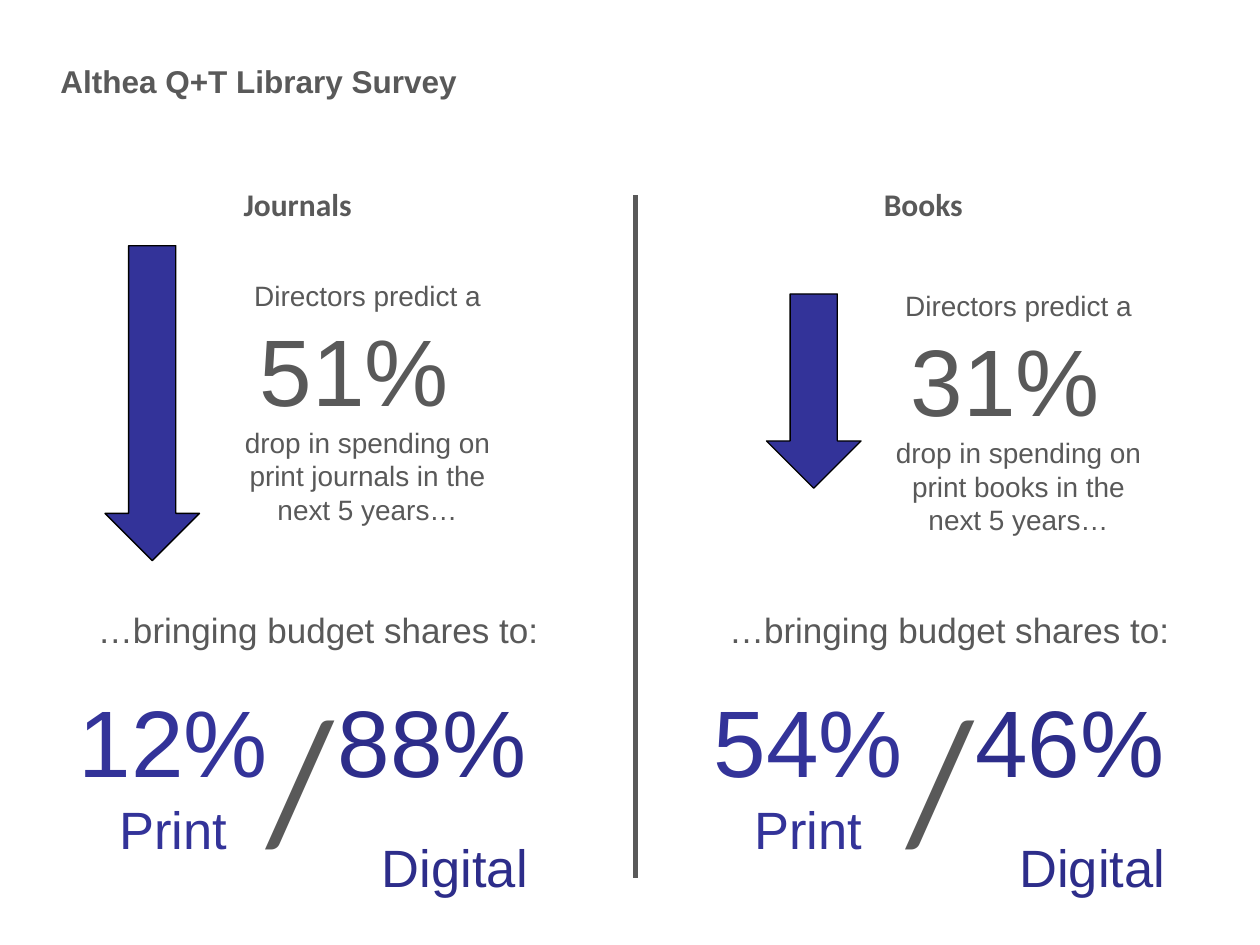
from pptx import Presentation
from pptx.dml.color import RGBColor
from pptx.enum.shapes import MSO_CONNECTOR as LINE, MSO_SHAPE as SHAPE
from pptx.enum.text import MSO_ANCHOR as ANCHOR, MSO_AUTO_SIZE as SIZE, PP_ALIGN as ALIGN
from pptx.oxml.ns import qn
from pptx.util import Inches, Pt
from lxml.etree import SubElement

GRAY = RGBColor(0x59, 0x59, 0x59)
BLUE = RGBColor(0x33, 0x33, 0x99)
NAVY = RGBColor(0x2D, 0x2D, 0x8A)
BLACK = RGBColor(0, 0, 0)

WIDE, HIGH = Inches(10), Inches(7.5)
UNIT = WIDE / 24  # square grid: 24 columns, 18 rows


def grid(*cells):
    return [round(cell * UNIT) for cell in cells]


def style(run, size, color=GRAY, name="Arial", bold=False):
    look = {"size": Pt(size), "name": name, "bold": bold}
    for key, value in look.items():
        setattr(run.font, key, value)
    run.font.color.rgb = color


def add_text(slide, box, paras, align=ALIGN.CENTER, **look):
    """Each paragraph is a list of (text, size) runs."""
    frame = slide.shapes.add_textbox(*grid(*box)).text_frame
    frame.word_wrap = True
    frame.auto_size = SIZE.SHAPE_TO_FIT_TEXT
    for i, runs in enumerate(paras):
        para = frame.add_paragraph() if i else frame.paragraphs[0]
        para.alignment = align
        for text, size in runs:
            run = para.add_run()
            run.text = text
            style(run, size, **look)
    return frame


def add_title(slide, text):
    title = slide.shapes.title
    spot = {"left": 0.38, "top": 0.36, "width": 9.04, "height": 0.56}
    for key, value in spot.items():
        setattr(title, key, Inches(value))
    frame = title.text_frame
    frame.vertical_anchor = ANCHOR.MIDDLE
    para = frame.paragraphs[0]
    para.alignment = ALIGN.LEFT
    run = para.add_run()
    run.text = text
    style(run, 18, bold=True)


def add_rule(slide, x, top, end):
    rule = slide.shapes.add_connector(LINE.STRAIGHT, *grid(x, top, x, end))
    rule.line.color.rgb = GRAY
    rule.line.width = Pt(3)
    SubElement(rule._element.spPr, qn("a:effectLst"))


def add_arrow(slide, x, y, high):
    arrow = slide.shapes.add_shape(SHAPE.DOWN_ARROW, *grid(x, y, 1.8, high))
    arrow.shadow.inherit = False
    arrow.fill.solid()
    arrow.fill.fore_color.rgb = BLUE
    arrow.line.color.rgb = BLACK
    arrow.line.width = Pt(0.75)


def add_drop(slide, x, y, share, kind):
    add_text(slide, (x, y, 5.2, 5.02), [
        [("Directors predict a ", 16), (share + " ", 54)],
        [(f"drop in spending on print {kind} in the next 5 years…", 16)]])


def add_split(slide, left, mid, right, paper, screen):
    """Print share, slash and digital share."""
    add_text(slide, (left, 12.9, 4.6, 3.62),
             [[(paper, 54)], [("Print", 30)]], color=BLUE)
    frame = add_text(slide, (right, 12.9, 4.6, 3.62),
                     [[(screen, 54)], [("Digital", 30)]],
                     align=ALIGN.LEFT, color=NAVY)
    # The digital label sits lower and further in
    label = frame.paragraphs[1]
    label.space_before = Pt(22)
    label._p.get_or_add_pPr().set("marL", str(Inches(0.35)))
    add_text(slide, (mid, 12.6, 1, 4.27), [[("/", 100)]],
             align=ALIGN.LEFT, name="Calibri")


def add_half(slide, head, align, arrow, drop, share, split):
    name, x, wide = head
    add_text(slide, (x, 3.4, wide, 1.2), [[(name, 18)]],
             align=align, name="Calibri", bold=True)
    add_arrow(slide, *arrow)
    add_drop(slide, *drop, name.lower())
    add_text(slide, (share, 11.48, 9, 1.06),
             [[("…bringing budget shares to:", 20)]], align=ALIGN.LEFT)
    add_split(slide, *split)


def main():
    deck = Presentation()
    deck.slide_width, deck.slide_height = WIDE, HIGH
    slide = deck.slides.add_slide(deck.slide_layouts[5])

    # Title and divider
    add_title(slide, "Althea Q+T Library Survey")
    add_rule(slide, 12.1, 3.72, 16.73)

    # Journals on the left, books on the right
    add_half(slide, ("Journals", 3.77, 3.8), ALIGN.CENTER,
             arrow=(2, 4.68, 6), drop=(4.4, 5.18, "51%"), share=1.63,
             split=(1, 4.85, 6.2, "12%", "88%"))
    add_half(slide, ("Books", 16.6, 2.8), ALIGN.LEFT,
             arrow=(14.6, 5.6, 3.7), drop=(16.8, 5.38, "31%"), share=13.65,
             split=(13.1, 17.04, 18.34, "54%", "46%"))

    deck.save("out.pptx")


if __name__ == "__main__":
    main()
